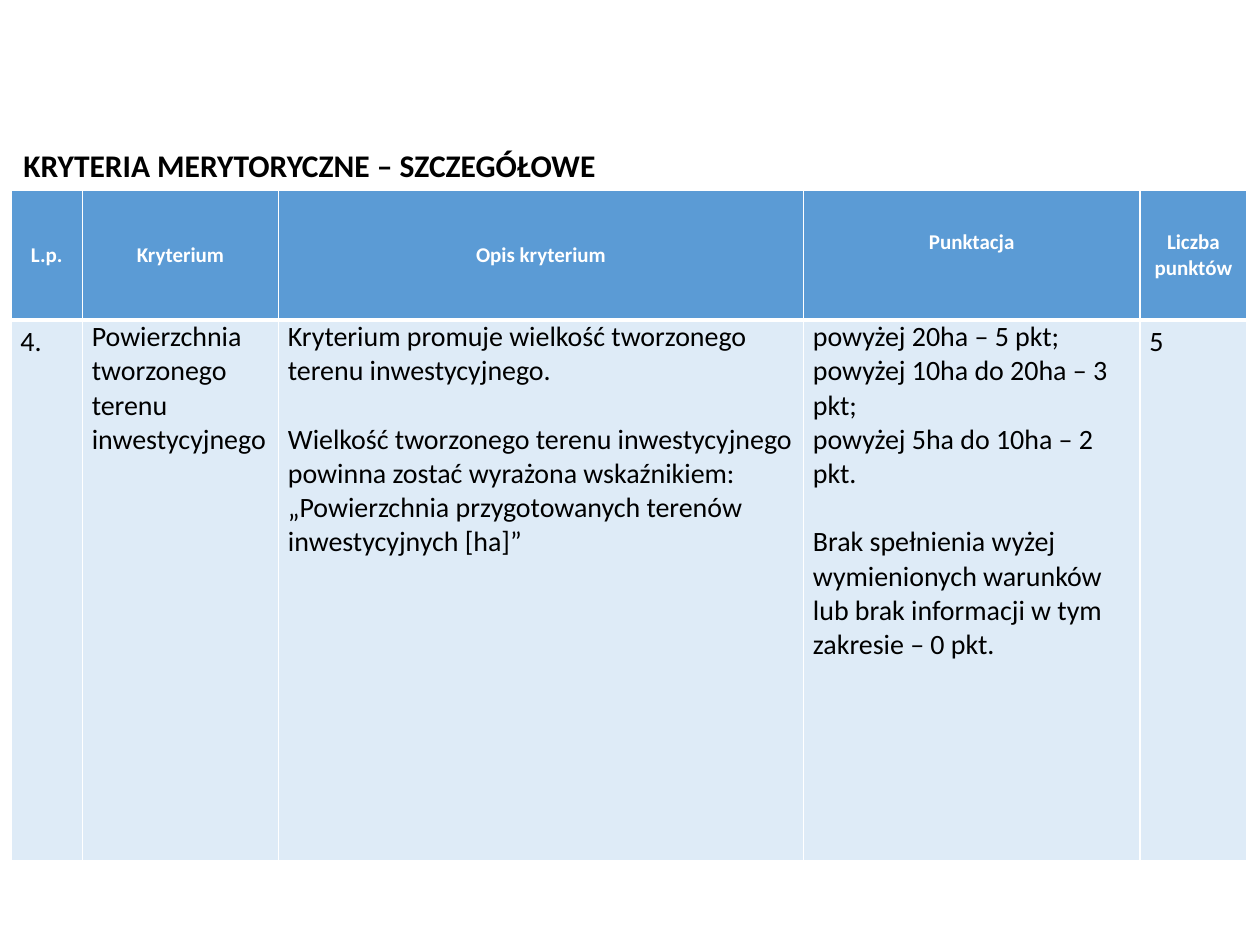
from dataclasses import dataclass

import pptx
import pptx.dml.color
import pptx.enum.text
import pptx.oxml
import pptx.oxml.ns
import pptx.util

Pt = pptx.util.Pt
PP_ALIGN = pptx.enum.text.PP_ALIGN
MSO_ANCHOR = pptx.enum.text.MSO_ANCHOR

COLORS = {"header": "5B9BD5", "body": "DEEBF7", "light": "FFFFFF", "dark": "000000"}
FONT = "Calibri"
LEFT = 6.3
TABLE_TOP = 109
ROW_HEIGHTS = (73.8, 309.3)
LINE_GAP = 19.5


@dataclass(frozen=True)
class Para:
    text: str
    before: float = 0
    spacing: float = 1.0


@dataclass(frozen=True)
class Column:
    width: float
    heading: str
    paras: tuple[Para, ...]
    heading_bottom: float = 3.6


COLUMNS = (
    Column(40.8, "L.p.", (Para("4.", spacing=1.15),)),
    Column(112.1, "Kryterium", (Para("Powierzchnia tworzonego terenu inwestycyjnego"),)),
    Column(300, "Opis kryterium", (
        Para("Kryterium promuje wielkość tworzonego terenu inwestycyjnego."),
        Para("Wielkość tworzonego terenu inwestycyjnego powinna zostać wyrażona wskaźnikiem:",
             before=LINE_GAP),
        Para("„Powierzchnia przygotowanych terenów inwestycyjnych [ha]”"),
    )),
    Column(192.2, "Punktacja", (
        Para("powyżej 20ha – 5 pkt;"),
        Para("powyżej 10ha do 20ha – 3 pkt;"),
        Para("powyżej 5ha do 10ha – 2 pkt."),
        Para("Brak spełnienia wyżej wymienionych warunków lub brak informacji w tym "
             "zakresie – 0 pkt.", before=LINE_GAP),
    ), heading_bottom=18.2),
    Column(61.2, "Liczba punktów", (Para("5", spacing=1.15),)),
)


def rgb(name: str) -> pptx.dml.color.RGBColor:
    return pptx.dml.color.RGBColor.from_string(COLORS[name])


def add_run(p, text: str, size: float, color: str, bold: bool = False) -> None:
    r = p.add_run()
    r.text = text
    r.font.name = FONT
    r.font.size = Pt(size)
    r.font.bold = bold
    r.font.color.rgb = rgb(color)


def style_cell(cell, fill: str, top: float, bottom: float) -> None:
    tc_pr = cell._tc.get_or_add_tcPr()
    for side, width in (("L", 1), ("R", 1), ("T", top), ("B", bottom)):
        tc_pr.append(pptx.oxml.parse_xml(
            f'<a:ln{side} {pptx.oxml.ns.nsdecls("a")} w="{Pt(width)}"><a:solidFill>'
            f'<a:srgbClr val="{COLORS["light"]}"/></a:solidFill></a:ln{side}>'))
    cell.fill.solid()
    cell.fill.fore_color.rgb = rgb(fill)


def fill_heading(cell, column: Column) -> None:
    style_cell(cell, "header", top=1, bottom=3)
    cell.vertical_anchor = MSO_ANCHOR.MIDDLE
    cell.margin_bottom = Pt(column.heading_bottom)
    p = cell.text_frame.paragraphs[0]
    p.alignment = PP_ALIGN.CENTER
    add_run(p, column.heading, 12, "light", bold=True)


def fill_body(cell, column: Column) -> None:
    style_cell(cell, "body", top=3, bottom=1)
    cell.margin_left = cell.margin_right = Pt(5.4)
    cell.margin_top = cell.margin_bottom = Pt(0)
    tf = cell.text_frame
    for i, para in enumerate(column.paras):
        p = tf.add_paragraph() if i else tf.paragraphs[0]
        p.line_spacing = para.spacing
        if para.before:
            p.space_before = Pt(para.before)
        add_run(p, para.text, 16, "dark")


def add_criteria_table(s) -> None:
    table = s.shapes.add_table(
        len(ROW_HEIGHTS), len(COLUMNS), Pt(LEFT), Pt(TABLE_TOP),
        Pt(sum(c.width for c in COLUMNS)), Pt(sum(ROW_HEIGHTS))).table
    for row, height in zip(table.rows, ROW_HEIGHTS):
        row.height = Pt(height)
    for i, column in enumerate(COLUMNS):
        table.columns[i].width = Pt(column.width)
        fill_heading(table.cell(0, i), column)
        fill_body(table.cell(1, i), column)


def add_title(s) -> None:
    sp = s.shapes.add_textbox(Pt(LEFT), Pt(79.5), Pt(352.8), Pt(29))
    tf = sp.text_frame
    tf.word_wrap = False
    tf.auto_size = pptx.enum.text.MSO_AUTO_SIZE.SHAPE_TO_FIT_TEXT
    tf.vertical_anchor = MSO_ANCHOR.MIDDLE
    p = tf.paragraphs[0]
    p.alignment = PP_ALIGN.LEFT
    add_run(p, "KRYTERIA MERYTORYCZNE – SZCZEGÓŁOWE", 18, "dark", bold=True)


def main() -> None:
    prs = pptx.Presentation()
    prs.slide_width, prs.slide_height = Pt(720), Pt(540)
    s = prs.slides.add_slide(prs.slide_layouts[6])
    add_criteria_table(s)
    add_title(s)
    prs.save("out.pptx")


if __name__ == "__main__":
    main()
